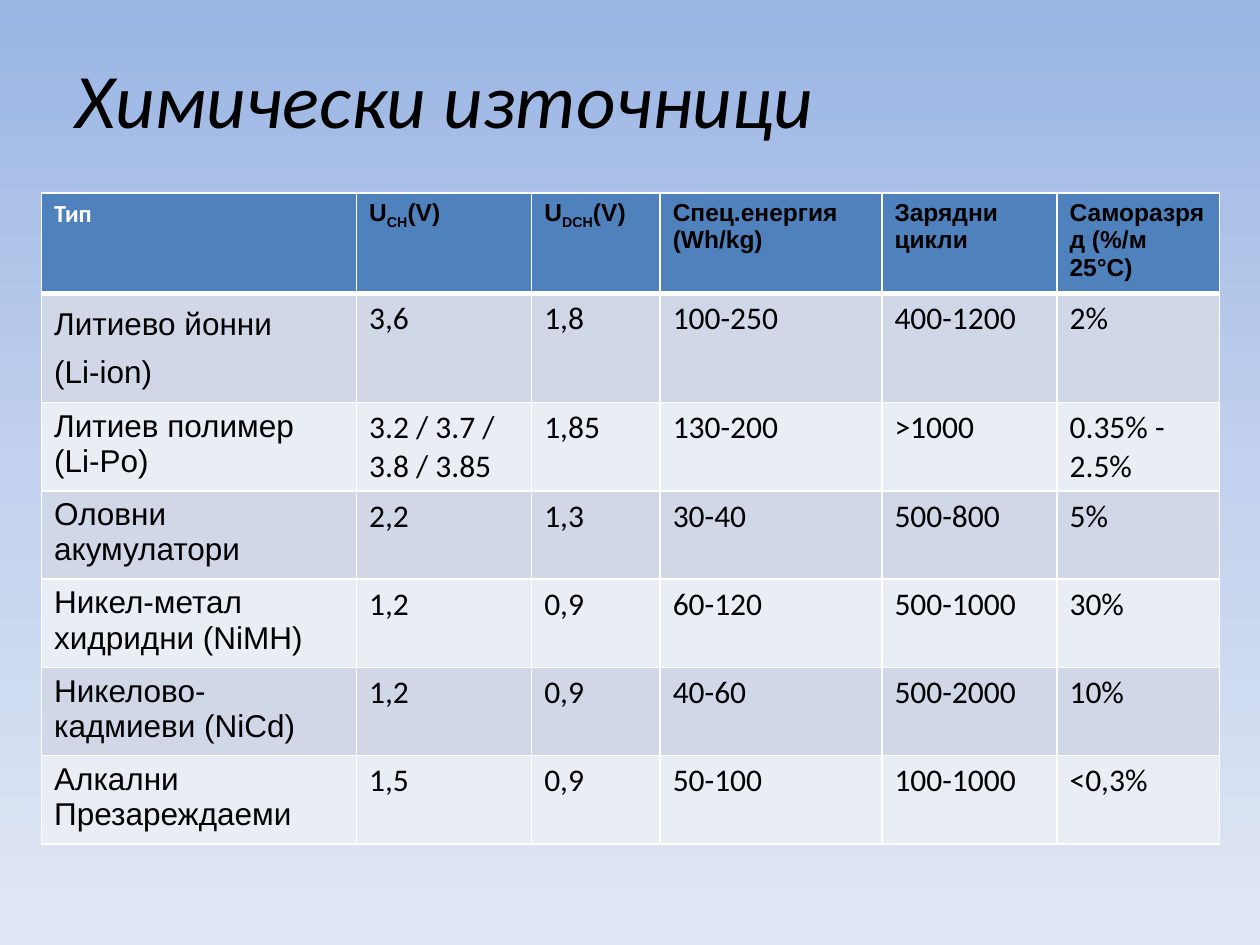
from copy import deepcopy
from dataclasses import dataclass

from lxml import etree
from pptx import Presentation
from pptx import util as u
from pptx.dml.color import RGBColor
from pptx.enum import text
from pptx.oxml.ns import qn

# Content: a cell is a list of paragraphs, a paragraph a list of (text, is_subscript)
TITLE = "Химически източници"
HEADER = [
    [[("Тип", False)]],
    [[("U", False), ("CH", True), ("(V)", False)]],
    [[("U", False), ("DCH", True), ("(V)", False)]],
    [[("Спец.енергия (Wh/kg)", False)]],
    [[("Зарядни цикли", False)]],
    [[("Саморазряд (%/м 25°С)", False)]],
]
SOURCES = [
    ("Литиево йонни\n(Li-ion)", "3,6", "1,8", "100-250", "400-1200", "2%"),
    ("Литиев полимер (Li-Po)", "3.2 / 3.7 / 3.8 / 3.85", "1,85", "130-200", ">1000", "0.35% - 2.5%"),
    ("Оловни акумулатори", "2,2", "1,3", "30-40", "500-800", "5%"),
    ("Никел-метал хидридни (NiMH)", "1,2", "0,9", "60-120", "500-1000", "30%"),
    ("Никелово-кадмиеви (NiCd)", "1,2", "0,9", "40-60", "500-2000", "10%"),
    ("Алкални Презареждаеми", "1,5", "0,9", "50-100", "100-1000", "<0,3%"),
]
COL_WIDTHS = [2.5, 1.39, 1.02, 1.76, 1.39, 1.29]
ROW_HEIGHT = 0.6


@dataclass(frozen=True)
class Theme:
    backdrop: tuple = ((0, "9AB5E4"), (50, "C2D1ED"), (100, "E1E8F5"))
    header: str = "4F81BD"
    bands: tuple = ("D0D8E8", "E9EDF4")
    line: str = "FFFFFF"
    ink: str = "000000"
    light: str = "FFFFFF"
    body_font: str = "Calibri"
    label_font: str = "Arial"
    title_size: int = 44
    header_size: int = 14
    body_size: int = 18


T = Theme()


def add_run(p, words, font, size, color, bold=False, italic=False, sub=False):
    r = p.add_run()
    r.text = words
    f = r.font
    f.name, f.size, f.bold, f.italic = font, u.Pt(size), bold, italic
    f.color.rgb = RGBColor.from_string(color)
    if sub:
        f._element.set("baseline", "-25000")


def set_borders(cell, bottom):
    tcPr = cell._tc.get_or_add_tcPr()
    for i, side in enumerate("LRTB"):
        ln = etree.Element(qn(f"a:ln{side}"), w=str(u.Pt(bottom if side == "B" else 1)))
        fill = etree.SubElement(ln, qn("a:solidFill"))
        etree.SubElement(fill, qn("a:srgbClr"), val=T.line)
        tcPr.insert(i, ln)


def fill_cell(cell, paragraphs, fill, bottom=1, **style):
    cell.fill.solid()
    cell.fill.fore_color.rgb = RGBColor.from_string(fill)
    set_borders(cell, bottom)
    tf = cell.text_frame
    for i, runs in enumerate(paragraphs):
        p = tf.add_paragraph() if i else tf.paragraphs[0]
        if len(paragraphs) > 1:
            p.line_spacing = 1.2
            p.space_before = u.Pt(3.2 if i else 0)
        for words, sub in runs:
            add_run(p, words, sub=sub, **style)


prs = Presentation()
prs.slide_width, prs.slide_height = u.Inches(10), u.Inches(7.5)
s = prs.slides.add_slide(prs.slide_layouts[6])

# Background gradient, top to bottom
bg = s.background.fill
bg.gradient()
bg.gradient_angle = 270
stops = s.element.find(".//" + qn("a:gsLst"))
stops.insert(1, deepcopy(stops[0]))
for stop, (position, color) in zip(bg.gradient_stops, T.backdrop):
    stop.position = position / 100
    stop.color.rgb = RGBColor.from_string(color)

# Title
tf = s.shapes.add_textbox(u.Inches(0.5), u.Inches(0.3), u.Inches(9), u.Inches(0.95)).text_frame
tf.word_wrap = True
tf.vertical_anchor = text.MSO_ANCHOR.MIDDLE
add_run(tf.paragraphs[0], TITLE, T.body_font, T.title_size, T.ink, italic=True)

# Table grid
n_rows = len(SOURCES) + 1
table = s.shapes.add_table(n_rows, len(COL_WIDTHS), u.Inches(0.33), u.Inches(1.53),
                           u.Inches(sum(COL_WIDTHS)), u.Inches(ROW_HEIGHT * n_rows)).table
for column, width in zip(table.columns, COL_WIDTHS):
    column.width = u.Inches(width)

# Header row
for c, paragraphs in enumerate(HEADER):
    fill_cell(table.cell(0, c), paragraphs, T.header, bottom=3, size=T.header_size, bold=True,
              font=T.label_font if c else T.body_font, color=T.ink if c else T.light)

# Banded body rows
for r, values in enumerate(SOURCES):
    for c, value in enumerate(values):
        fill_cell(table.cell(r + 1, c), [[(line, False)] for line in value.split("\n")],
                  T.bands[r % 2], size=T.body_size, color=T.ink,
                  font=T.body_font if c else T.label_font)

prs.save("out.pptx")
